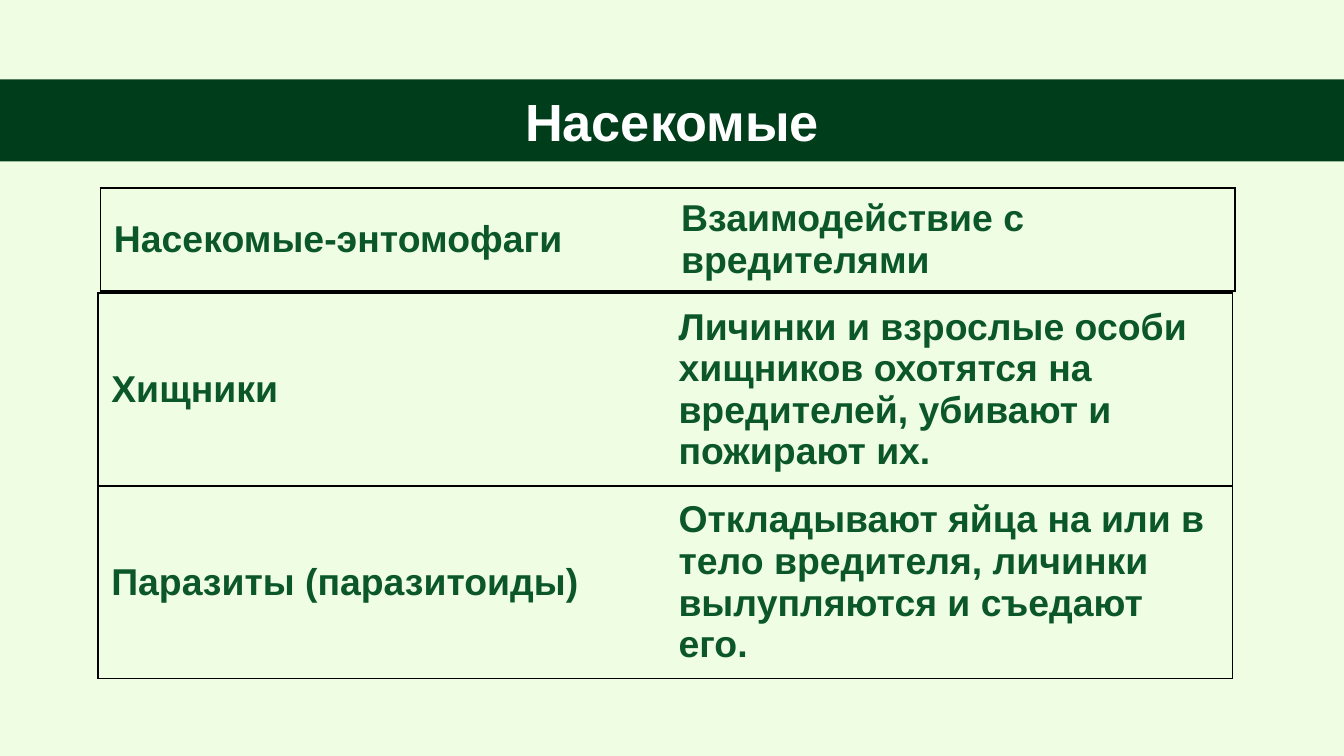
from dataclasses import dataclass

from lxml.etree import SubElement
from pptx import Presentation
from pptx.dml.color import RGBColor
from pptx.enum.shapes import MSO_SHAPE
from pptx.enum.text import MSO_ANCHOR, PP_ALIGN
from pptx.oxml.ns import qn
from pptx.util import Cm, Pt


@dataclass(frozen=True)
class Theme:
    background: str = "EFFDE3"
    band: str = "003D1B"
    title: str = "FFFFFF"
    text: str = "0B5729"
    border: str = "000000"
    font: str = "Arial"
    title_size: int = 28
    text_size: int = 20
    border_width: int = 1


@dataclass(frozen=True)
class Grid:
    left: float
    top: float
    row_height: float
    rows: tuple[tuple[str, str], ...]


THEME = Theme()
SLIDE_WIDTH, SLIDE_HEIGHT = 25.4, 14.29
COLUMN_WIDTH = 10.72

GRIDS = (
    Grid(1.85, 5.54, 3.53, (
        ("Хищники", "Личинки и взрослые особи хищников охотятся на "
                    "вредителей, убивают и пожирают их."),
        ("Паразиты (паразитоиды)", "Откладывают яйца на или в тело вредителя, "
                                   "личинки вылупляются и съедают его."),
    )),
    Grid(1.9, 3.55, 1.9, (
        ("Насекомые-энтомофаги", "Взаимодействие с вредителями"),
    )),
)


def style_paragraph(p, size: int, color: str) -> None:
    font = p.font
    font.name, font.size, font.bold = THEME.font, Pt(size), True
    font.color.rgb = RGBColor.from_string(color)


def set_borders(cell, visible: str) -> None:
    """Draw the sides named in visible and clear the others."""
    tcPr = cell._tc.get_or_add_tcPr()
    for side in "LRTB":
        ln = SubElement(tcPr, qn(f"a:ln{side}"), w=str(Pt(THEME.border_width)))
        if side in visible:
            fill = SubElement(ln, qn("a:solidFill"))
            SubElement(fill, qn("a:srgbClr"), val=THEME.border)
        else:
            SubElement(ln, qn("a:noFill"))


def add_header(s, text: str) -> None:
    band = s.shapes.add_shape(MSO_SHAPE.RECTANGLE, 0, Cm(1.5), Cm(SLIDE_WIDTH), Cm(1.55))
    band.shadow.inherit = False
    band.fill.solid()
    band.fill.fore_color.rgb = RGBColor.from_string(THEME.band)
    band.line.fill.background()

    width = 2 * COLUMN_WIDTH
    box = s.shapes.add_textbox(Cm((SLIDE_WIDTH - width) / 2), Cm(1.63), Cm(width), Cm(1.32))
    tf = box.text_frame
    tf.word_wrap = True
    tf.vertical_anchor = MSO_ANCHOR.MIDDLE
    tf.margin_top = tf.margin_bottom = Cm(0.25)
    p = tf.paragraphs[0]
    p.text = text
    p.alignment = PP_ALIGN.CENTER
    style_paragraph(p, THEME.title_size, THEME.title)


def add_grid(s, grid: Grid) -> None:
    table = s.shapes.add_table(
        len(grid.rows), 2, Cm(grid.left), Cm(grid.top),
        Cm(2 * COLUMN_WIDTH), Cm(grid.row_height * len(grid.rows))).table
    table.first_row = table.horz_banding = False
    for column in table.columns:
        column.width = Cm(COLUMN_WIDTH)
    for row, texts in zip(table.rows, grid.rows):
        row.height = Cm(grid.row_height)
        # Only the outer side of each column has a vertical border
        for cell, text, visible in zip(row.cells, texts, ("LTB", "RTB")):
            cell.text = text
            cell.vertical_anchor = MSO_ANCHOR.MIDDLE
            style_paragraph(cell.text_frame.paragraphs[0], THEME.text_size, THEME.text)
            set_borders(cell, visible)
            cell.fill.background()


def main() -> None:
    prs = Presentation()
    prs.slide_width, prs.slide_height = Cm(SLIDE_WIDTH), Cm(SLIDE_HEIGHT)
    s = prs.slides.add_slide(prs.slide_layouts[6])

    # Background
    s.background.fill.solid()
    s.background.fill.fore_color.rgb = RGBColor.from_string(THEME.background)

    # Title band
    add_header(s, "Насекомые")

    # Body table and its heading table
    for grid in GRIDS:
        add_grid(s, grid)

    prs.save("out.pptx")


if __name__ == "__main__":
    main()
